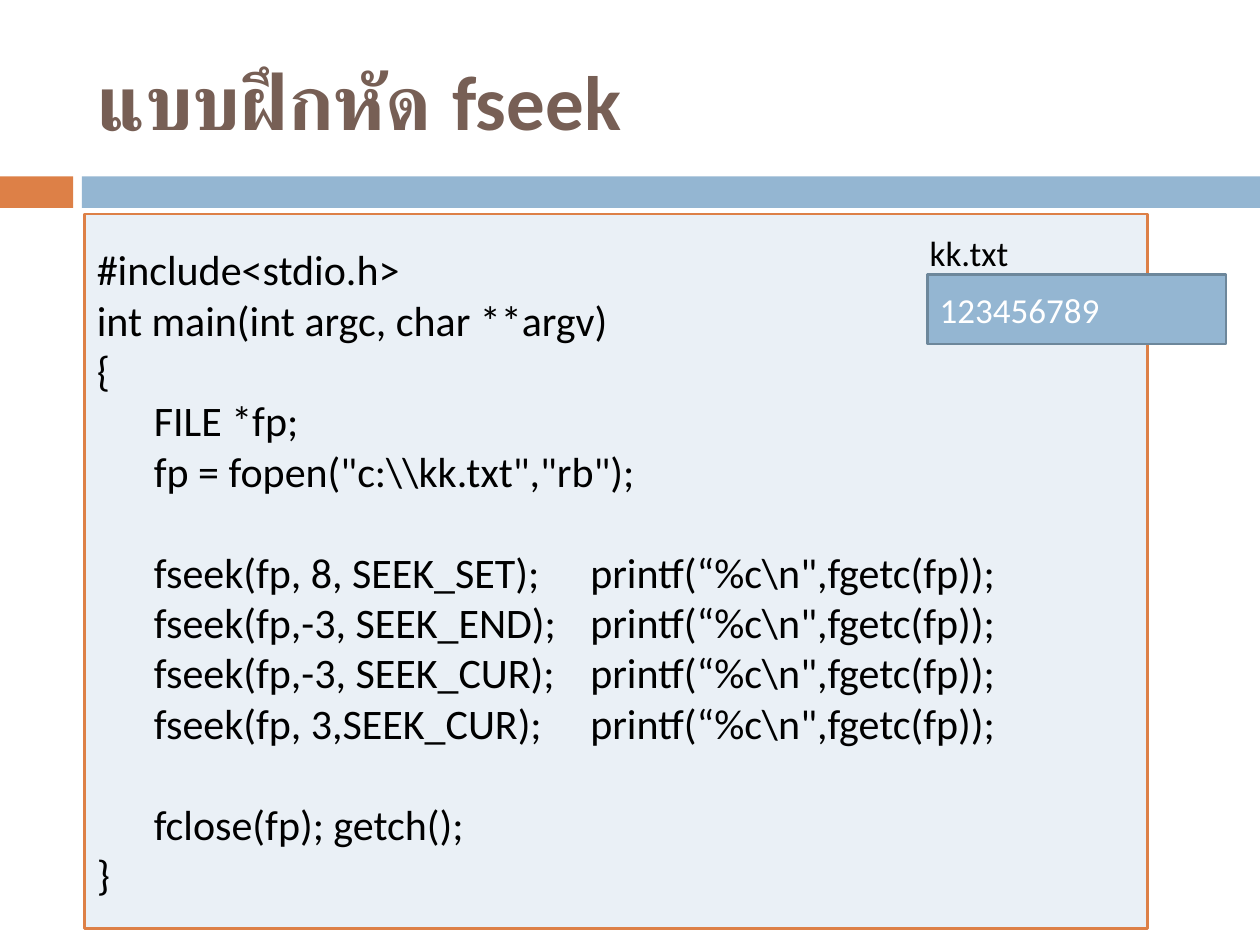
from dataclasses import dataclass

import lxml.etree
import pptx
import pptx.dml.color
import pptx.enum.shapes
import pptx.enum.text
import pptx.oxml.ns
import pptx.util

Pt = pptx.util.Pt
COLORS = {
    "orange": "DD8047",
    "blue": "94B6D2",
    "blue_edge": "6D879B",
    "panel": "EAF0F6",
    "title": "775F55",
    "black": "000000",
    "white": "FFFFFF",
}
FONT = "Calibri"
CODE_LINE_HEIGHT = 28.8
CODE_TABS = (32.6, 282)  # body indent, printf column


@dataclass
class Box:
    left: float
    top: float
    width: float
    height: float
    fill: str
    line: str | None = None


ACCENT_BAR = Box(0, 100.8, 41.76, 18, "orange")
LONG_BAR = Box(46.8, 100.8, 673.2, 18, "blue")
CODE_PANEL = Box(48.24, 122.4, 607.68, 408.24, "panel", "orange")
FILE_CONTENT = Box(529.92, 156.96, 170.64, 39.6, "blue", "blue_edge")

SEEKS = ("fp, 8, SEEK_SET", "fp,-3, SEEK_END", "fp,-3, SEEK_CUR", "fp, 3,SEEK_CUR")
CODE_BLOCKS = [
    [
        "#include<stdio.h>",
        "int main(int argc, char **argv)",
        "{",
        "\tFILE *fp;",
        '\tfp = fopen("c:\\\\kk.txt","rb");',
    ],
    [f'\tfseek({args});\tprintf(“%c\\n",fgetc(fp));' for args in SEEKS],
    ["\tfclose(fp); getch();", "}"],
]


def rgb(name: str) -> pptx.dml.color.RGBColor:
    return pptx.dml.color.RGBColor.from_string(COLORS[name])


def add_box(s, box: Box):
    sp = s.shapes.add_shape(
        pptx.enum.shapes.MSO_SHAPE.RECTANGLE,
        Pt(box.left), Pt(box.top), Pt(box.width), Pt(box.height),
    )
    sp.shadow.inherit = False
    sp.fill.solid()
    sp.fill.fore_color.rgb = rgb(box.fill)
    if box.line:
        sp.line.color.rgb = rgb(box.line)
        sp.line.width = Pt(1.5)
    else:
        sp.line.fill.background()
    return sp


def write(p, text: str, size: float, color: str, bold: bool = False) -> None:
    p.text = text
    p.alignment = pptx.enum.text.PP_ALIGN.LEFT
    p.font.name = FONT
    p.font.size = Pt(size)
    p.font.bold = bold
    p.font.color.rgb = rgb(color)


def add_tab_stops(p, positions: tuple[float, ...]) -> None:
    qn = pptx.oxml.ns.qn
    tabs = lxml.etree.Element(qn("a:tabLst"))
    for position in positions:
        lxml.etree.SubElement(tabs, qn("a:tab"), pos=str(Pt(position)), algn="l")
    # The schema wants tab stops ahead of the default run properties.
    p.font._element.addprevious(tabs)


def write_code(tf, blocks: list[list[str]]) -> None:
    """Write code lines, with one line of space ahead of each later block."""
    p = tf.paragraphs[0]
    for b, block in enumerate(blocks):
        for i, line in enumerate(block):
            if b or i:
                p = tf.add_paragraph()
            write(p, line, 24, "black")
            if b and i == 0:
                p.space_before = Pt(CODE_LINE_HEIGHT)
            add_tab_stops(p, CODE_TABS)


def set_title(s, text: str) -> None:
    title = s.shapes.title
    title.left, title.top = Pt(48.24), Pt(18)
    title.width, title.height = Pt(642.24), Pt(77.76)
    title.text_frame.vertical_anchor = pptx.enum.text.MSO_ANCHOR.MIDDLE
    write(title.text_frame.paragraphs[0], text, 44, "title", bold=True)


def main() -> None:
    prs = pptx.Presentation()
    prs.slide_width, prs.slide_height = Pt(720), Pt(540)
    s = prs.slides.add_slide(prs.slide_layouts[5])

    set_title(s, "แบบฝึกหัด fseek")
    for bar in (ACCENT_BAR, LONG_BAR):
        add_box(s, bar)
    write_code(add_box(s, CODE_PANEL).text_frame, CODE_BLOCKS)

    label = s.shapes.add_textbox(Pt(524.16), Pt(128.88), Pt(61.2), Pt(31.68))
    label.text_frame.word_wrap = False
    write(label.text_frame.paragraphs[0], "kk.txt", 20, "black")
    content = add_box(s, FILE_CONTENT)
    write(content.text_frame.paragraphs[0], "123456789", 20, "white")

    prs.save("out.pptx")


if __name__ == "__main__":
    main()
